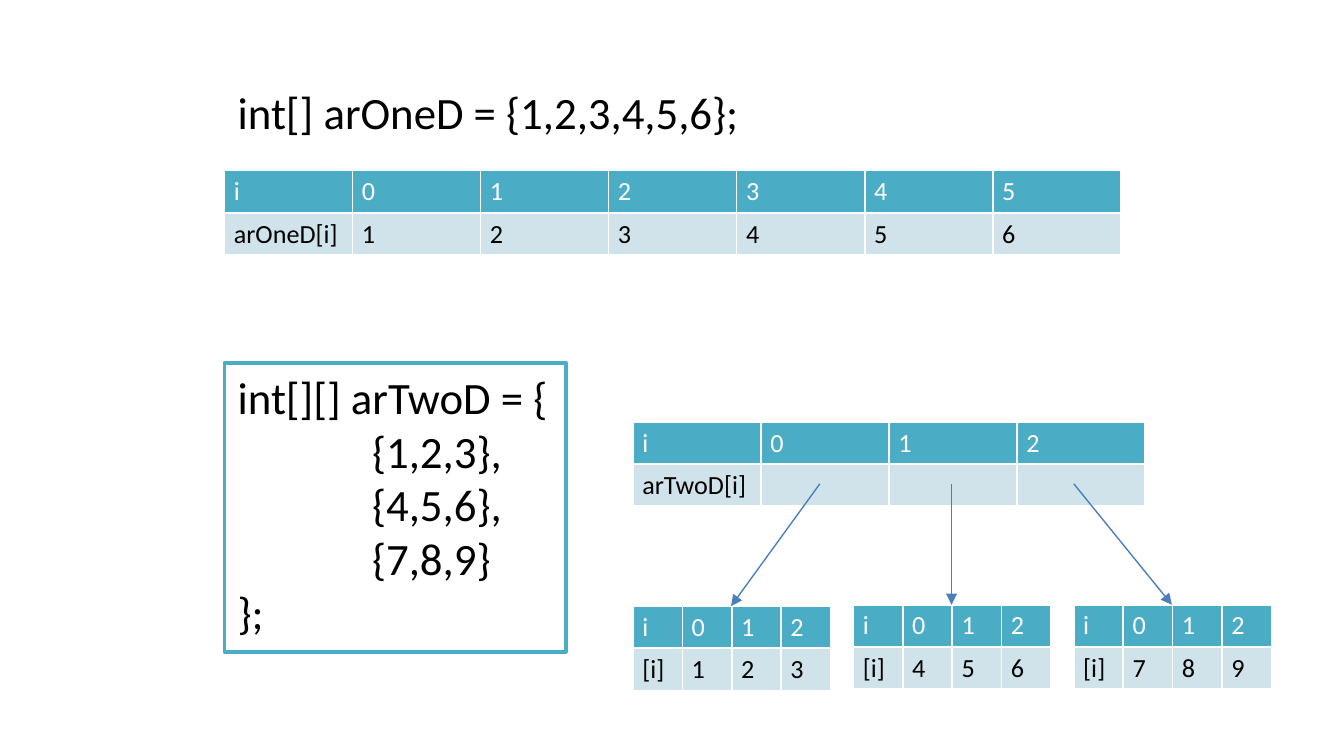
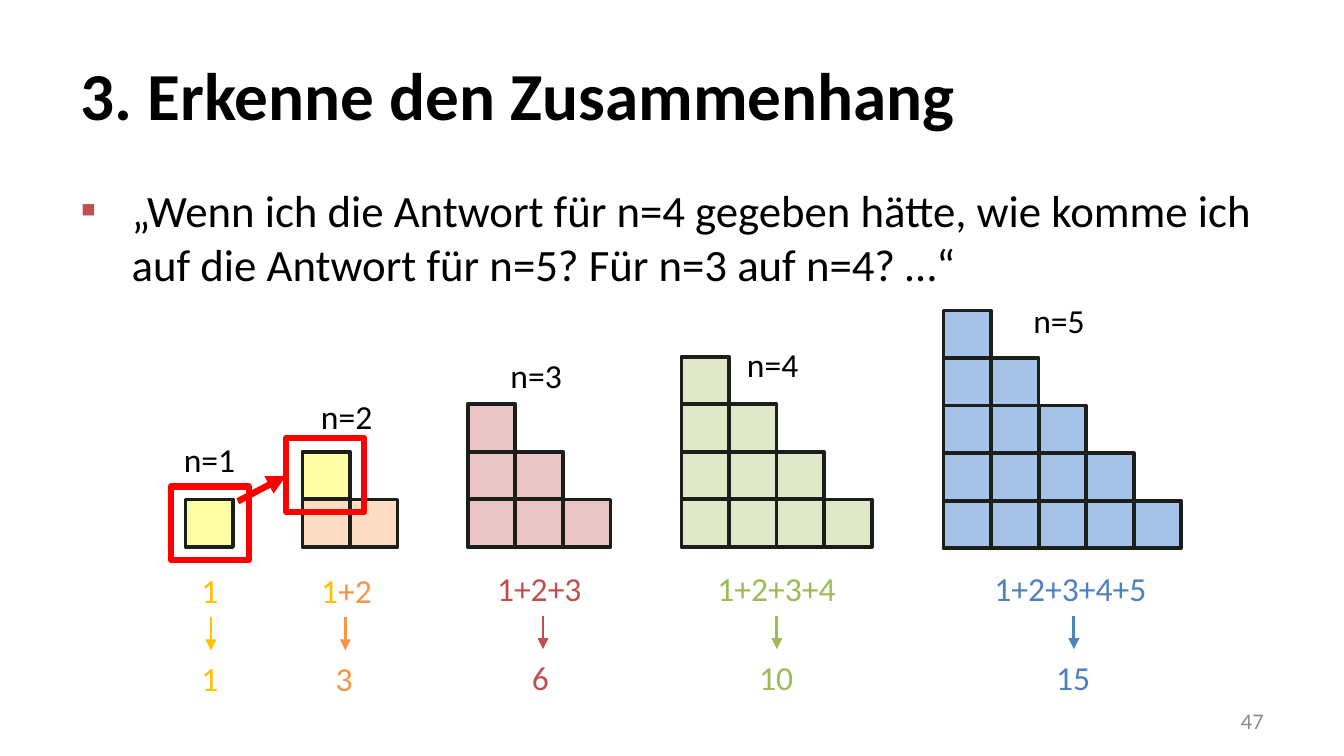
"""Build two slides: Java arrays as tables, and stair numbers."""
from lxml import etree
from pptx import Presentation, util as u
from pptx.dml.color import RGBColor
from pptx.enum import shapes as es, text as et
from pptx.oxml.ns import qn

FONT = "Calibri"
SIZE = u.Pt(720), u.Pt(405)
HEX = {
    "black": "000000", "white": "FFFFFF", "head": "4BACC6", "pale": "D0E3EA",
    "link": "4B7EBC", "edge": "1C1E19", "mark": "FF0000", "grey": "8C8C8C",
    "gold": "FFC000", "orange": "F79646", "red": "C0504D",
    "green": "9BBB59", "blue": "4F81BD",
}
TINT = {
    "gold": ("FFFF00", 35), "orange": ("FAC090", 53), "red": ("D99694", 53),
    "green": ("C3D69B", 53), "blue": ("558ED5", 53),
}

ONE = "int[] arOneD = {1,2,3,4,5,6};"
TWO = [("int[][] arTwoD = {", 0), ("{1,2,3},", 1), ("{4,5,6},", 1),
       ("{7,8,9}", 1), ("};", 0)]
ROW = 0.31
GRIDS = [
    (1.67, 1.27, 6.67, "arOneD[i]", list("123456")),
    (4.71, 3.14, 3.81, "arTwoD[i]", [""] * 3),
    (4.71, 4.51, 1.47, "[i]", list("123")),
    (6.35, 4.5, 1.47, "[i]", list("456")),
    (7.99, 4.5, 1.47, "[i]", list("789")),
]
LINKS = [(6.1, 5.44, 4.51), (7.08, 7.08, 4.5), (7.99, 8.72, 4.5)]

TITLE = "3. Erkenne den Zusammenhang"
ASK = ("„Wenn ich die Antwort für n=4 gegeben hätte, wie komme ich "
       "auf die Antwort für n=5? Für n=3 auf n=4? …“")
UNIT = 1.77 / 5
STAIRS = [
    dict(hue="gold", left=1.38, base=4.07, tag=(1.27, 3.22),
         sum=(1.4, 4.19, 0.35), end=(1.4, 0.35), mid=1.57),
    dict(hue="orange", left=2.25, base=4.07, tag=(2.29, 2.9),
         sum=(2.29, 4.19, 0.59), end=(2.4, 0.34), mid=2.57),
    dict(hue="red", left=3.48, base=4.07, tag=(3.7, 2.59),
         sum=(3.6, 4.18, 0.84), end=(3.86, 0.35), mid=4.04),
    dict(hue="green", left=5.07, base=4.07, tag=(5.46, 2.51),
         sum=(5.24, 4.18, 1.17), end=(5.55, 0.58), mid=5.78),
    dict(hue="blue", left=7.02, base=4.08, tag=(7.59, 2.18),
         sum=(7.3, 4.18, 1.39), end=(7.76, 0.53), mid=7.99),
]
MARKS = [(1.27, 3.62), (2.13, 3.26)]


def rgb(hue):
    return RGBColor.from_string(HEX.get(hue, hue))


def inch(*nums):
    return [u.Inches(n) for n in nums]


def sub(node, tag, **attrs):
    return etree.SubElement(node, qn(tag), attrs)


def write(para, words, size, hue="black", bold=False):
    run = para.add_run()
    run.text = words
    font = run.font
    font.name, font.size, font.bold = FONT, u.Pt(size), bold
    font.color.rgb = rgb(hue)


def note(slide, box, runs, size, wrap=True):
    frame = slide.shapes.add_textbox(*inch(*box)).text_frame
    frame.word_wrap = wrap
    for words, hue in runs:
        write(frame.paragraphs[0], words, size, hue)
    return frame


def rect(shapes, box, hue, width, fill=None):
    shape = shapes.add_shape(es.MSO_SHAPE.RECTANGLE, *inch(*box))
    shape.shadow.inherit = False
    shape.line.color.rgb = rgb(hue)
    shape.line.width = u.Pt(width)
    if fill:
        tone, alpha = fill
        shape.fill.solid()
        shape.fill.fore_color.rgb = rgb(tone)
        node = shape.element.spPr.xpath("a:solidFill/a:srgbClr")[0]
        sub(node, "a:alpha", val=str(alpha * 1000))
    else:
        shape.fill.background()


def arrow(slide, ends, hue, width):
    link = slide.shapes.add_connector(es.MSO_CONNECTOR.STRAIGHT, *inch(*ends))
    link.line.color.rgb = rgb(hue)
    link.line.width = u.Pt(width)
    props = link.element.spPr
    sub(props.find(qn("a:ln")), "a:tailEnd", type="triangle")
    sub(props, "a:effectLst")


def style(cell, words, top):
    cell.margin_left = cell.margin_right = u.Inches(0.07)
    cell.margin_top = cell.margin_bottom = u.Inches(0.04)
    props = cell._tc.get_or_add_tcPr()
    for side in "LRTB":
        line = sub(props, f"a:ln{side}", w=str(u.Pt(1)))
        sub(sub(line, "a:solidFill"), "a:srgbClr", val=HEX["white"])
    cell.fill.solid()
    cell.fill.fore_color.rgb = rgb("head" if top else "pale")
    para = cell.text_frame.paragraphs[0]
    if words:
        write(para, words, 14, "white" if top else "black")
    else:
        sub(para._p, "a:endParaRPr", sz="1400")


def grid(slide, left, top, width, name, vals):
    rows = [["i"] + [str(n) for n in range(len(vals))], [name] + vals]
    box = inch(left, top, width, ROW * 2)
    table = slide.shapes.add_table(2, len(rows[0]), *box).table
    for r, row in enumerate(rows):
        for c, words in enumerate(row):
            style(table.cell(r, c), words, r == 0)


def arrays(deck):
    slide = deck.slides.add_slide(deck.slide_layouts[6])
    note(slide, (1.67, 0.58, 3.96, 0.5), [(ONE, "black")], 24, False)
    frame = note(slide, (1.67, 2.7, 2.53, 2.12), [], 24, False)
    for n, (words, level) in enumerate(TWO):
        para = frame.add_paragraph() if n else frame.paragraphs[0]
        para._p.get_or_add_pPr().set("marL", str(u.Inches(level)))
        write(para, words, 24)
    rect(slide.shapes, (1.67, 2.7, 2.54, 2.15), "head", 2)
    for item in GRIDS:
        grid(slide, *item)
    for start, end, low in LINKS:
        arrow(slide, (start, 3.6, end, low), "link", 0.75)


def place(shape, box):
    shape.left, shape.top, shape.width, shape.height = inch(*box)
    frame = shape.text_frame
    frame.word_wrap = True
    frame.auto_size = et.MSO_AUTO_SIZE.NONE
    return frame


def heads(slide):
    frame = place(slide.shapes.title, (0.5, 0.23, 9, 0.94))
    frame.vertical_anchor = et.MSO_ANCHOR.MIDDLE
    frame.paragraphs[0].alignment = et.PP_ALIGN.LEFT
    write(frame.paragraphs[0], TITLE, 36, bold=True)
    para = place(slide.placeholders[1], (0.5, 1.31, 9, 0.95)).paragraphs[0]
    para.space_before = para.space_after = u.Pt(6)
    props = para._p.get_or_add_pPr()
    props.set("marL", str(u.Inches(0.38)))
    props.set("indent", str(u.Inches(-0.38)))
    sub(sub(props, "a:buClr"), "a:srgbClr", val=HEX["red"])
    sub(props, "a:buFont", typeface=FONT)
    sub(props, "a:buChar", char="▪")
    write(para, ASK, 24)


def stair(slide, n, item):
    hue = item["hue"]
    shapes = slide.shapes.add_group_shape().shapes if n > 1 else slide.shapes
    for c in range(n):
        for r in range(n - c):
            tone = "gold" if n == 2 and r == 1 else hue
            box = (item["left"] + c * UNIT, item["base"] - (r + 1) * UNIT,
                   UNIT, UNIT)
            rect(shapes, box, "edge", 2, TINT[tone])
    note(slide, (*item["tag"], 0.63, 0.4), [(f"n={n}", "black")], 18)
    terms = "+".join(str(k + 1) for k in range(n))
    runs = [("1", "gold"), ("+2", hue)] if n == 2 else [(terms, hue)]
    left, top, width = item["sum"]
    note(slide, (left, top, width, 0.4), runs, 18)
    left, width = item["end"]
    note(slide, (left, top + 0.66, width, 0.4),
         [(str(n * (n + 1) // 2), hue)], 18)
    arrow(slide, (item["mid"], top + 0.4, item["mid"], top + 0.65), hue, 1.5)


def stairs(deck):
    slide = deck.slides.add_slide(deck.slide_layouts[1])
    heads(slide)
    frame = note(slide, (9.02, 5.21, 0.48, 0.3), [("47", "grey")], 12)
    frame.vertical_anchor = et.MSO_ANCHOR.MIDDLE
    frame.paragraphs[0].alignment = et.PP_ALIGN.RIGHT
    for n, item in enumerate(STAIRS, 1):
        stair(slide, n, item)
    for spot in MARKS:
        rect(slide.shapes, (*spot, 0.58, 0.55), "mark", 3.25)
    arrow(slide, (1.77, 3.73, 2.13, 3.54), "mark", 3.5)


def main():
    deck = Presentation()
    deck.slide_width, deck.slide_height = SIZE
    arrays(deck)
    stairs(deck)
    deck.save("out.pptx")


if __name__ == "__main__":
    main()
